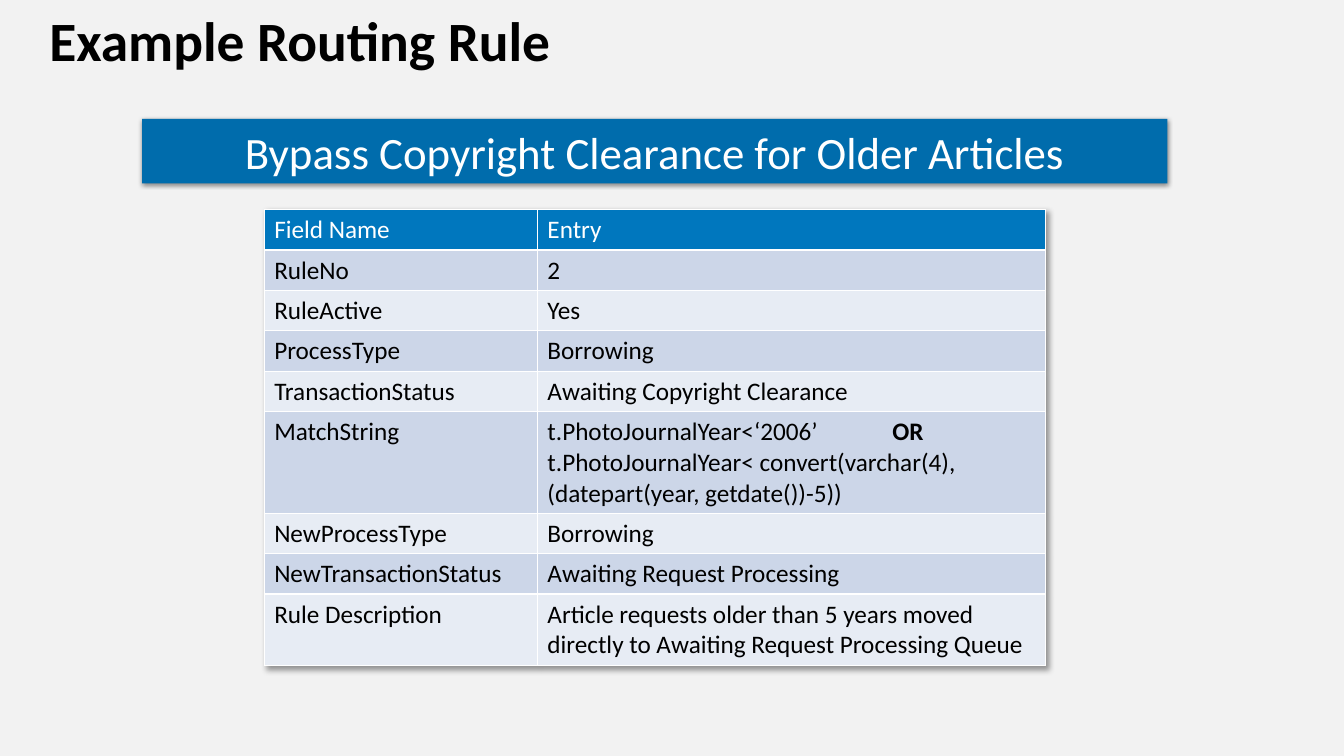
from dataclasses import dataclass
from typing import Any

from lxml.etree import SubElement
from pptx import Presentation
from pptx.dml.color import RGBColor
from pptx.enum.shapes import MSO_SHAPE
from pptx.enum.text import MSO_ANCHOR, PP_ALIGN
from pptx.oxml import parse_xml
from pptx.oxml.ns import nsdecls, qn
from pptx.util import Inches, Pt

FONT = "Calibri"
HEAD = "0077BE"
BANDS = ("CCD6E8", "E7ECF4")
LINE = 0.4


@dataclass
class Part:
    text: str
    bold: bool = False


@dataclass
class Row:
    field: str
    entry: list[Part]
    high: float = LINE


@dataclass
class Shade:
    blur: float
    dist: float
    angle: int
    alpha: int


ROWS = [
    Row("Field Name", [Part("Entry")]),
    Row("RuleNo", [Part("2")]),
    Row("RuleActive", [Part("Yes")]),
    Row("ProcessType", [Part("Borrowing")]),
    Row("TransactionStatus", [Part("Awaiting Copyright Clearance")]),
    Row("MatchString", [
        Part("t.PhotoJournalYear<‘2006’\t"),
        Part("OR ", True),
        Part("t.PhotoJournalYear< convert(varchar(4), (datepart(year, getdate())-5))"),
    ], 1.01),
    Row("NewProcessType", [Part("Borrowing")]),
    Row("NewTransactionStatus", [Part("Awaiting Request Processing")]),
    Row("Rule Description", [
        Part("Article requests older than 5 years moved directly to "
             "Awaiting Request Processing Queue"),
    ], 0.71),
]


def color(code: str) -> RGBColor:
    return RGBColor.from_string(code)


def paint(item: Any, code: str) -> None:
    item.fill.solid()
    item.fill.fore_color.rgb = color(code)


def apply(item: Any, form: dict[str, Any]) -> None:
    for name, value in form.items():
        setattr(item, name, value)


def write(para: Any, parts: list[Part], size: float, code: str) -> None:
    for part in parts:
        run = para.add_run()
        run.text = part.text
        apply(run.font, {"name": FONT, "size": Pt(size), "bold": part.bold})
        run.font.color.rgb = color(code)


def effect(shade: Shade) -> Any:
    return parse_xml(
        f'<a:effectLst {nsdecls("a")}><a:outerShdw blurRad="{Pt(shade.blur)}" '
        f'dist="{Pt(shade.dist)}" dir="{shade.angle * 60000}" algn="tl" rotWithShape="0">'
        f'<a:srgbClr val="000000"><a:alpha val="{shade.alpha * 1000}"/></a:srgbClr>'
        '</a:outerShdw></a:effectLst>')


def add_title(slide: Any) -> None:
    box = slide.shapes.add_textbox(Inches(0.39), Inches(0.15), Inches(12.55), Inches(0.56))
    frame = box.text_frame
    apply(frame, {"word_wrap": True, "vertical_anchor": MSO_ANCHOR.MIDDLE})
    para = frame.paragraphs[0]
    para.line_spacing = 0.9
    write(para, [Part("Example Routing Rule", True)], 39.6, "000000")


def add_banner(slide: Any) -> None:
    bar = slide.shapes.add_shape(
        MSO_SHAPE.RECTANGLE, Inches(1.41), Inches(1.18), Inches(10.17), Inches(0.64))
    paint(bar, "006CAC")
    bar.line.fill.background()
    bar._element.spPr.append(effect(Shade(3.5, 1.1, 90, 45)))
    frame = bar.text_frame
    apply(frame, {"word_wrap": True, "vertical_anchor": MSO_ANCHOR.MIDDLE})
    para = frame.paragraphs[0]
    para.alignment = PP_ALIGN.CENTER
    write(para, [Part("Bypass Copyright Clearance for Older Articles")], 32, "FFFFFF")


def add_rules(slide: Any) -> None:
    high = sum(row.high for row in ROWS)
    table = slide.shapes.add_table(
        len(ROWS), 2, Inches(2.62), Inches(2.08), Inches(7.75), Inches(high)).table
    table._tbl.tblPr.insert(0, effect(Shade(4, 3, 45, 40)))
    for column, width in zip(table.columns, (2.71, 5.04)):
        column.width = Inches(width)
    for index, row in enumerate(ROWS):
        table.rows[index].height = Inches(row.high)
        fill = BANDS[(index - 1) % 2] if index else HEAD
        ink = "000000" if index else "FFFFFF"
        for place, parts in enumerate(([Part(row.field)], row.entry)):
            cell = table.cell(index, place)
            paint(cell, fill)
            para = cell.text_frame.paragraphs[0]
            if any("\t" in part.text for part in parts):
                tabs = SubElement(para._p.get_or_add_pPr(), qn("a:tabLst"))
                SubElement(tabs, qn("a:tab"), pos=str(Inches(3.42)), algn="l")
            write(para, parts, 18, ink)


def main() -> None:
    deck = Presentation()
    apply(deck, {"slide_width": Inches(13.33), "slide_height": Inches(7.5)})
    slide = deck.slides.add_slide(deck.slide_layouts[6])
    paint(slide.background, "F2F2F2")
    add_title(slide)
    add_rules(slide)
    add_banner(slide)
    deck.save("out.pptx")


if __name__ == "__main__":
    main()
